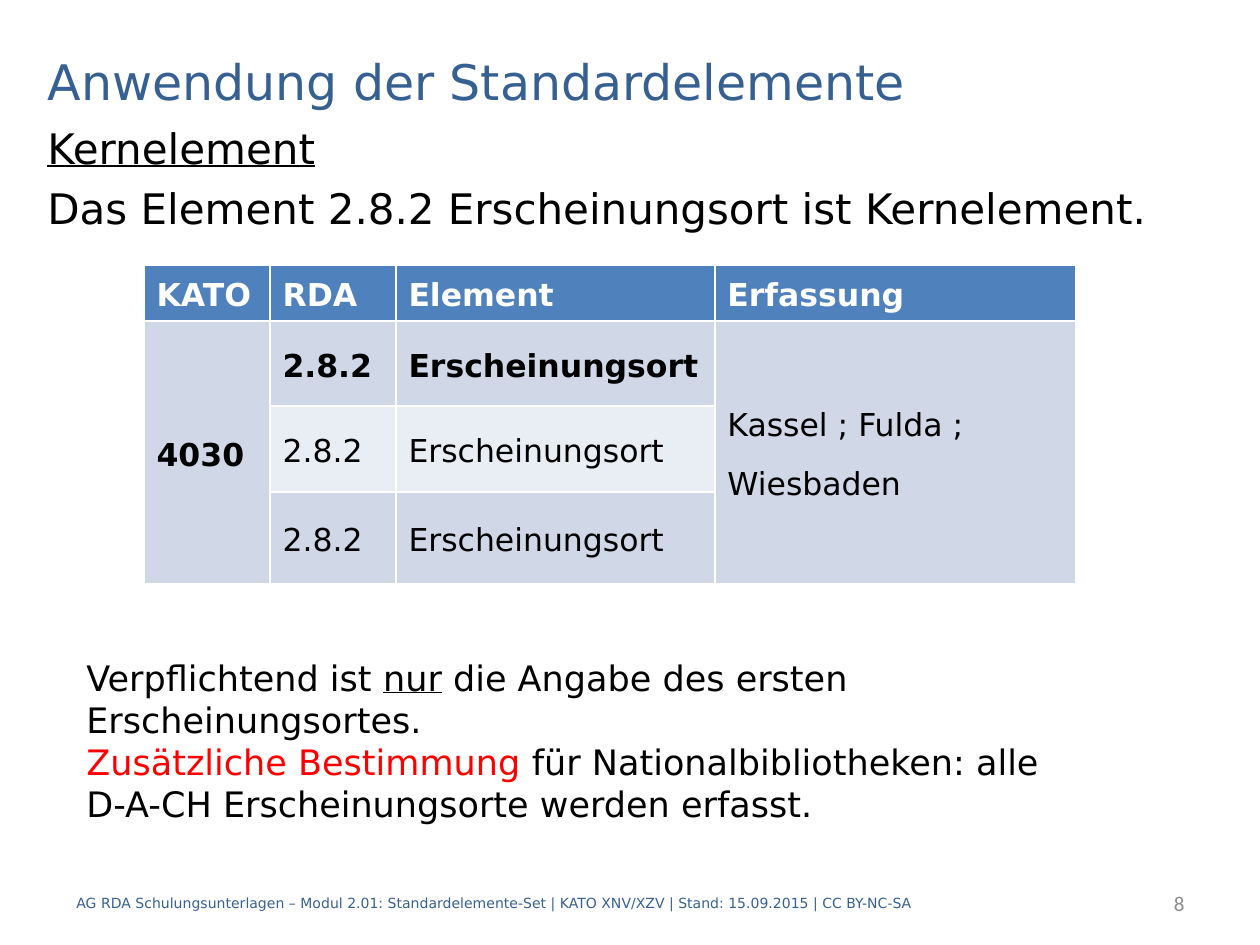
from dataclasses import dataclass

from pptx import Presentation
from pptx.dml.color import RGBColor
from pptx.enum.text import MSO_ANCHOR, MSO_AUTO_SIZE, PP_ALIGN
from pptx.util import Pt

PX = 914400 // 126


@dataclass(frozen=True)
class Theme:
    """Colours, fonts and type sizes of the slide."""
    text_font: str = "DejaVu Sans"
    number_font: str = "Calibri"
    blue: str = "376092"
    black: str = "000000"
    white: str = "FFFFFF"
    red: str = "FF0000"
    grey: str = "8C8C8C"
    header_fill: str = "4F81BD"
    dark_band: str = "D0D8E8"
    light_band: str = "E9EDF4"
    title_size: int = 28
    lead_size: int = 24
    note_size: int = 20
    table_size: int = 18
    number_size: int = 12
    footer_size: int = 8


THEME = Theme()


def emu(*lengths):
    """Turn px lengths into EMU."""
    return [length * PX for length in lengths]


def style(paragraph, size, color, bold=False, font=THEME.text_font):
    """Set the font of a whole paragraph."""
    paragraph.font.name = font
    paragraph.font.size = Pt(size)
    paragraph.font.bold = bold
    paragraph.font.color.rgb = RGBColor.from_string(color)


def add_text(slide, box, lines, size, color, anchor=MSO_ANCHOR.TOP, font=THEME.text_font):
    """Add a wrapping text box with one paragraph per line and return its frame."""
    frame = slide.shapes.add_textbox(*emu(*box)).text_frame
    frame.word_wrap = True
    frame.vertical_anchor = anchor
    frame.text = "\n".join(lines)
    for paragraph in frame.paragraphs:
        style(paragraph, size, color, font=font)
    return frame


def add_title(slide, box, wording):
    """Move and format the title placeholder."""
    title = slide.shapes.title
    title.left, title.top, title.width, title.height = emu(*box)
    frame = title.text_frame
    frame.text = wording
    frame.word_wrap = True
    frame.auto_size = MSO_AUTO_SIZE.NONE
    frame.vertical_anchor = MSO_ANCHOR.MIDDLE
    heading = frame.paragraphs[0]
    heading.alignment = PP_ALIGN.LEFT
    style(heading, THEME.title_size, THEME.blue)


def add_lead(slide, box):
    """Add the underlined subheading and its statement."""
    lines = ["Kernelement", "Das Element 2.8.2 Erscheinungsort ist Kernelement."]
    subheading, statement = add_text(slide, box, lines, THEME.lead_size, THEME.black).paragraphs
    subheading.font.underline = True
    statement.space_before = Pt(5.6)


def fill_cell(cell, wording, fill, color, bold):
    """Write and format one table cell."""
    cell.fill.solid()
    cell.fill.fore_color.rgb = RGBColor.from_string(fill)
    cell.vertical_anchor = MSO_ANCHOR.MIDDLE
    cell.text = wording
    for paragraph in cell.text_frame.paragraphs:
        paragraph.line_spacing = 1.15
        paragraph.space_after = Pt(10)
        style(paragraph, THEME.table_size, color, bold)


def add_elements_table(slide, box):
    """Add the element table, whose outer columns span all body rows."""
    rows = [
        ["KATO", "RDA", "Element", "Erfassung"],
        ["4030", "2.8.2", "Erscheinungsort", "Kassel ; Fulda ;\nWiesbaden"],
        ["", "2.8.2", "Erscheinungsort", ""],
        ["", "2.8.2", "Erscheinungsort", ""],
    ]
    fills = [THEME.header_fill, THEME.dark_band, THEME.light_band, THEME.dark_band]
    table = slide.shapes.add_table(len(rows), len(rows[0]), *emu(*box)).table
    for column, width in zip(table.columns, emu(126, 126, 319, 361)):
        column.width = width
    for row, height in zip(table.rows, emu(55, 85, 86, 92)):
        row.height = height
    for column in (0, 3):
        table.cell(1, column).merge(table.cell(3, column))
    for r, (wordings, fill) in enumerate(zip(rows, fills)):
        color = THEME.black if r else THEME.white
        for c, wording in enumerate(wordings):
            cell = table.cell(r, c)
            if not cell.is_spanned:
                fill_cell(cell, wording, fill, color, bold=r == 0 or (r == 1 and c < 3))


def add_note(slide, box):
    """Add the closing note with its underlined and red words."""
    lines = ["Verpflichtend ist ", "", "D-A-CH Erscheinungsorte werden erfasst."]
    frame = add_text(slide, box, lines, THEME.note_size, THEME.black)
    frame.margin_top = 55 * PX
    duty, rule, _ = frame.paragraphs
    only = duty.add_run()
    only.text = "nur"
    only.font.underline = True
    duty.add_run().text = " die Angabe des ersten Erscheinungsortes."
    extra = rule.add_run()
    extra.text = "Zusätzliche Bestimmung "
    extra.font.color.rgb = RGBColor.from_string(THEME.red)
    rule.add_run().text = "für Nationalbibliotheken: alle"


def add_footer(slide, box, number_width):
    """Add the footer line and the page number at its right end."""
    left, top, width, height = box
    source = ("AG RDA Schulungsunterlagen – Modul 2.01: Standardelemente-Set | "
              "KATO XNV/XZV | Stand: 15.09.2015 | CC BY-NC-SA")
    add_text(slide, (left, top, 1071, height), [source],
             THEME.footer_size, THEME.blue, MSO_ANCHOR.MIDDLE)
    number_box = (left + width - number_width, top, number_width, height)
    number = add_text(slide, number_box, ["8"], THEME.number_size, THEME.grey,
                      MSO_ANCHOR.MIDDLE, THEME.number_font)
    number.paragraphs[0].alignment = PP_ALIGN.RIGHT


def main():
    """Build and save the slide."""
    deck = Presentation()
    deck.slide_width, deck.slide_height = emu(1260, 945)
    slide = deck.slides.add_slide(deck.slide_layouts[5])
    add_title(slide, (35, 45, 1191, 71), "Anwendung der Standardelemente")
    add_lead(slide, (35, 116, 1191, 753))
    add_footer(slide, (64, 878, 1133, 50), 200)
    add_note(slide, (74, 601, 1071, 233))
    add_elements_table(slide, (144, 265, 932, 318))
    deck.save("out.pptx")


if __name__ == "__main__":
    main()
